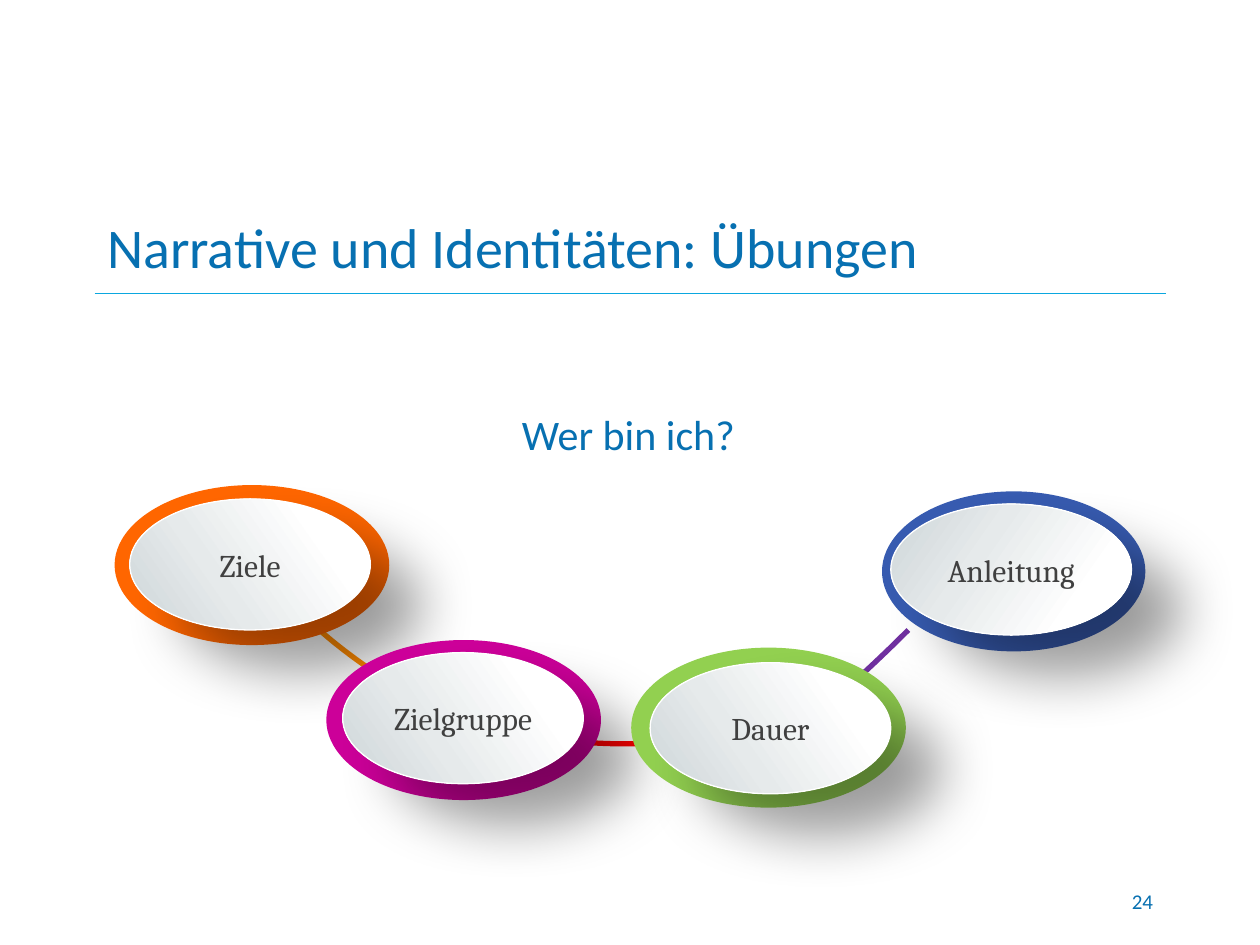
from lxml import etree
from pptx import Presentation
from pptx.dml.color import RGBColor
from pptx.enum.shapes import MSO_CONNECTOR, MSO_SHAPE
from pptx.enum.text import MSO_ANCHOR, MSO_AUTO_SIZE, PP_ALIGN
from pptx.oxml import parse_xml
from pptx.oxml.ns import nsdecls, qn
from pptx.util import Inches, Pt

COLORS = {
    "text": "0770B1", "rule": "0BA7DF", "label": "404040", "white": "FFFFFF",
    "orange": "FF6600", "magenta": "CC0099", "green": "92D050", "blue": "375BB0",
    "amber": "FF8A00", "red": "FF0000", "purple": "7030A0",
}
COLS, ROWS = 100, 75
INNER_SIZE = (19.1, 10.4)
SHEEN = [(0, "CDD5D8"), (37, "E6EAEB"), (77, "FFFFFF"), (100, "FFFFFF")]

# label, ring colour, ring box, inner left and top, mirrored
STATIONS = [
    ("Anleitung", "blue", (70, 39, 20.9, 12.7), (70.7, 40), False),
    ("Ziele", "orange", (9.1, 38.5, 21.8, 12.7), (10.3, 39.6), True),
    ("Zielgruppe", "magenta", (25.9, 50.8, 21.8, 12.7), (27.2, 51.8), True),
    ("Dauer", "green", (50.1, 51.4, 21.8, 12.7), (51.6, 52.6), True),
]
# colour and the four control points of each arc
ARCS = [
    ("purple", [(72.1, 50), (70.4, 51.7), (68.6, 53.4), (66.8, 55)]),
    ("purple", [(66.8, 54.9), (65, 56.1), (63.1, 57.1), (61, 57.9)]),
    ("red", [(44.9, 58.8), (48.2, 59.1), (51.5, 59.2), (54.8, 58.6)]),
    ("amber", [(24.7, 49.4), (26.8, 51.4), (29.4, 53.2), (32.2, 55)]),
]


def rgb(name):
    return RGBColor.from_string(COLORS[name])


def bezier(points, t):
    weights = ((1 - t) ** 3, 3 * t * (1 - t) ** 2, 3 * t * t * (1 - t), t ** 3)
    return tuple(sum(w * pt[axis] for w, pt in zip(weights, points)) for axis in (0, 1))


class Deck:
    """Style and current slide; lengths are columns and rows of a 100 x 75 grid."""

    def __init__(self):
        self.prs = Presentation()
        self.prs.slide_width, self.prs.slide_height = Inches(10), Inches(7.5)
        self.s = self.prs.slides.add_slide(self.prs.slide_layouts[5])

    def x(self, cols):
        return round(self.prs.slide_width * cols / COLS)

    def y(self, rows):
        return round(self.prs.slide_height * rows / ROWS)

    def box(self, left, top, width, height):
        return self.x(left), self.y(top), self.x(width), self.y(height)

    def add_text(self, sp, text, size, color="text", font="Calibri",
                 align=PP_ALIGN.LEFT, anchor=MSO_ANCHOR.MIDDLE):
        tf = sp.text_frame
        tf.word_wrap = True
        tf.vertical_anchor = anchor
        p = tf.paragraphs[0]
        p.alignment = align
        r = p.add_run()
        r.text = text
        r.font.size, r.font.name = Pt(size), font
        r.font.color.rgb = rgb(color)
        return p

    def title(self, text, box):
        sp = self.s.shapes.title
        sp.left, sp.top, sp.width, sp.height = self.box(*box)
        self.add_text(sp, text, 32)

    def textbox(self, text, box, size, **style):
        sp = self.s.shapes.add_textbox(*self.box(*box))
        return sp, self.add_text(sp, text, size, **style)

    def rule(self, left, right, row):
        line = self.s.shapes.add_connector(
            MSO_CONNECTOR.STRAIGHT, self.x(left), self.y(row), self.x(right), self.y(row))
        line.line.color.rgb, line.line.width = rgb("rule"), Pt(0.75)
        etree.SubElement(line._element.spPr, qn("a:effectLst"))

    def arc(self, color, points, steps=16):
        curve = [bezier(points, i / steps) for i in range(steps + 1)]
        (x0, y0), *rest = [(self.x(c), self.y(r)) for c, r in curve]
        builder = self.s.shapes.build_freeform(x0, y0)
        builder.add_line_segments(rest, close=False)
        sp = builder.convert_to_shape()
        sp.shadow.inherit = False
        sp.fill.background()
        sp.line.color.rgb, sp.line.width = rgb(color), Pt(3)

    def ellipse(self, box, mirrored):
        sp = self.s.shapes.add_shape(MSO_SHAPE.OVAL, *self.box(*box))
        sp.shadow.inherit = False
        if mirrored:
            sp._element.spPr.xfrm.set("flipH", "1")
        return sp

    def sheen(self, sp, mirrored):
        """Fill with a slanted grey-to-white gradient and cast a soft shadow."""
        stops = [(100 - pos, c) for pos, c in reversed(SHEEN)] if mirrored else SHEEN
        gs = "".join(f'<a:gs pos="{pos * 1000}"><a:srgbClr val="{c}"/></a:gs>'
                     for pos, c in stops)
        spPr = sp._element.spPr
        spPr.find(qn("a:prstGeom")).addnext(parse_xml(
            f'<a:gradFill {nsdecls("a")} rotWithShape="1"><a:gsLst>{gs}</a:gsLst>'
            '<a:lin ang="2100000" scaled="0"/></a:gradFill>'))
        spPr.find(qn("a:effectLst")).append(parse_xml(
            f'<a:outerShdw {nsdecls("a")} blurRad="{Pt(33)}" dist="{Pt(36.7)}" '
            'dir="2340000" algn="ctr" rotWithShape="0"><a:srgbClr val="000000">'
            '<a:alpha val="38000"/></a:srgbClr></a:outerShdw>'))

    def station(self, label, color, ring_box, inner_pos, mirrored):
        ring = self.ellipse(ring_box, mirrored)
        ring.fill.solid()
        ring.fill.fore_color.rgb = rgb(color)
        ring.line.fill.background()
        inner = self.ellipse(inner_pos + INNER_SIZE, mirrored)
        inner.line.color.rgb, inner.line.width = rgb("white"), Pt(0.75)
        self.sheen(inner, mirrored)
        tf = inner.text_frame
        tf.margin_left = tf.margin_right = tf.margin_top = tf.margin_bottom = 0
        self.add_text(inner, label, 18, "label", "Cambria", PP_ALIGN.CENTER)


def main():
    deck = Deck()
    deck.rule(7.5, 92.5, 23.3)
    deck.title("Narrative und Identitäten: Übungen", (7.5, 15.8, 85, 7.5))
    deck.textbox("24", (71.7, 69.5, 20.8, 4), 12, align=PP_ALIGN.RIGHT)
    sp, p = deck.textbox("Wer bin ich? ", (25.9, 31.3, 48.7, 5.4), 24,
                         align=PP_ALIGN.CENTER, anchor=MSO_ANCHOR.TOP)
    sp.text_frame.auto_size = MSO_AUTO_SIZE.SHAPE_TO_FIT_TEXT
    p.line_spacing, p.space_after = 1.15, Pt(6)
    for arc in ARCS:
        deck.arc(*arc)
    for station in STATIONS:
        deck.station(*station)
    deck.prs.save("out.pptx")


if __name__ == "__main__":
    main()
